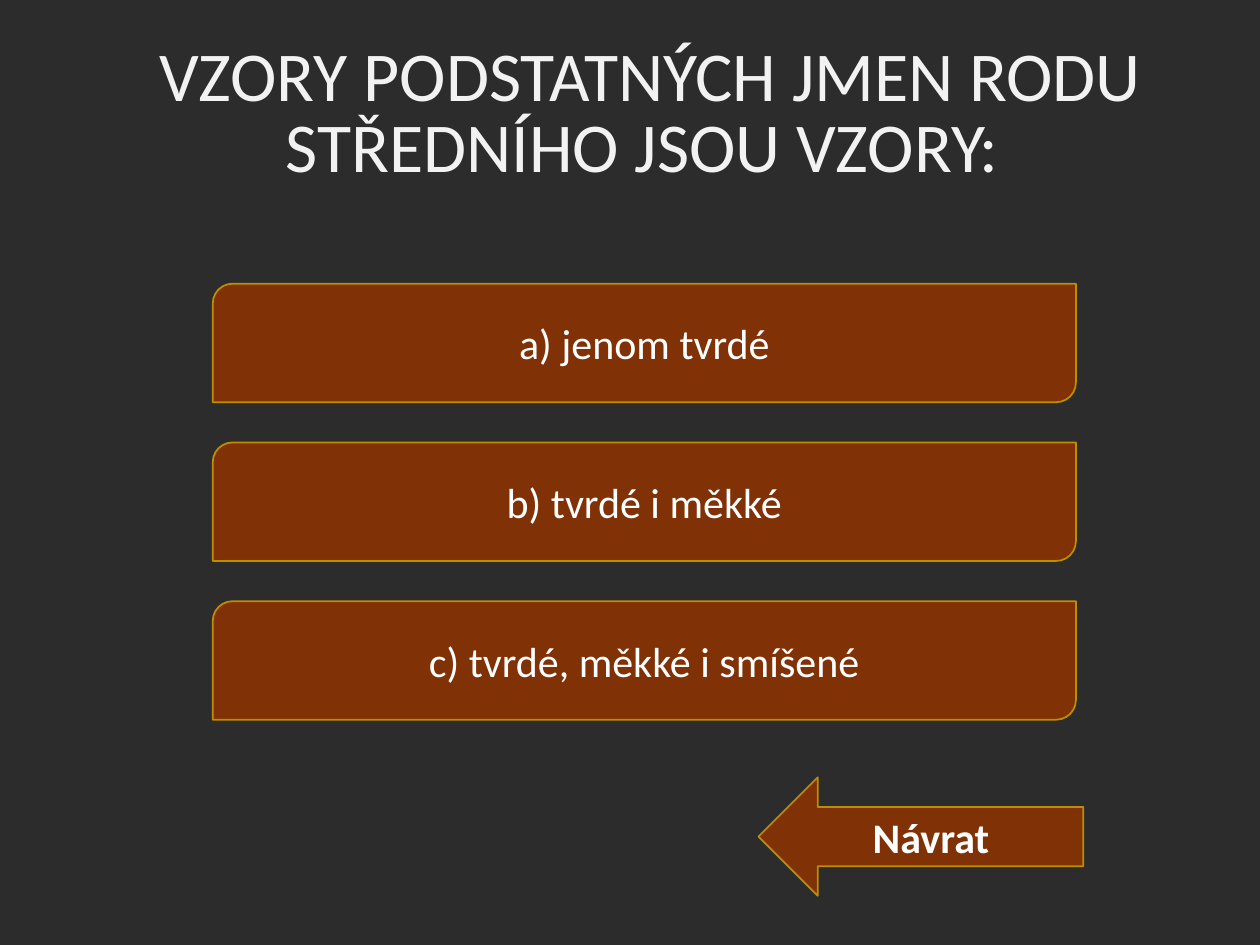
from dataclasses import dataclass

from pptx import Presentation
from pptx.dml.color import RGBColor
from pptx.enum.shapes import MSO_SHAPE
from pptx.enum.text import MSO_ANCHOR, PP_ALIGN
from pptx.slide import Slide
from pptx.text.text import TextFrame
from pptx.util import Cm, Pt

BACKGROUND = RGBColor(0x2C, 0x2C, 0x2C)
TITLE_COLOR = RGBColor(0xF2, 0xF2, 0xF2)
BUTTON_FILL = RGBColor(0x80, 0x31, 0x06)
BUTTON_LINE = RGBColor(0xBD, 0x8E, 0x00)
WHITE = RGBColor(0xFF, 0xFF, 0xFF)

BLANK_LAYOUT = 6
ANSWERS = ("a) jenom tvrdé", "b) tvrdé i měkké", "c) tvrdé, měkké i smíšené")
FIRST_ANSWER_TOP = 5.72
ANSWER_STEP = 3.2
BUTTON_HEIGHT = 2.39


@dataclass
class Button:
    """A labelled shape, measured in centimetres."""
    text: str
    left: float
    top: float
    width: float
    preset: MSO_SHAPE = MSO_SHAPE.ROUND_2_DIAG_RECTANGLE
    bold: bool = False


def write_text(frame: TextFrame, text: str, *, size: float = 24,
               color: RGBColor = WHITE, bold: bool = False,
               line_spacing: float = 1.0) -> None:
    frame.word_wrap = True
    frame.vertical_anchor = MSO_ANCHOR.MIDDLE
    paragraph = frame.paragraphs[0]
    paragraph.alignment = PP_ALIGN.CENTER
    paragraph.line_spacing = line_spacing
    run = paragraph.add_run()
    run.text = text
    run.font.name = "Calibri"
    run.font.size = Pt(size)
    run.font.bold = bold
    run.font.color.rgb = color


def draw_button(slide: Slide, button: Button) -> None:
    shape = slide.shapes.add_shape(button.preset, Cm(button.left), Cm(button.top),
                                   Cm(button.width), Cm(BUTTON_HEIGHT))
    shape.shadow.inherit = False
    shape.fill.solid()
    shape.fill.fore_color.rgb = BUTTON_FILL
    shape.line.color.rgb = BUTTON_LINE
    shape.line.width = Pt(1)
    write_text(shape.text_frame, button.text, bold=button.bold)


def main() -> None:
    presentation = Presentation()
    presentation.slide_width = Cm(25.4)
    presentation.slide_height = Cm(19.05)
    slide = presentation.slides.add_slide(presentation.slide_layouts[BLANK_LAYOUT])
    slide.background.fill.solid()
    slide.background.fill.fore_color.rgb = BACKGROUND

    title = slide.shapes.add_textbox(Cm(2.69), Cm(0.74), Cm(20.83), Cm(3.18))
    write_text(title.text_frame, "VZORY PODSTATNÝCH JMEN RODU STŘEDNÍHO JSOU VZORY: ",
               size=40, color=TITLE_COLOR, line_spacing=0.85)

    for index, answer in enumerate(ANSWERS):
        top = FIRST_ANSWER_TOP + index * ANSWER_STEP
        draw_button(slide, Button(answer, 4.29, top, 17.4))
    draw_button(slide, Button("Návrat ", 15.29, 15.67, 6.55,
                              preset=MSO_SHAPE.LEFT_ARROW, bold=True))

    presentation.save("out.pptx")


if __name__ == "__main__":
    main()
